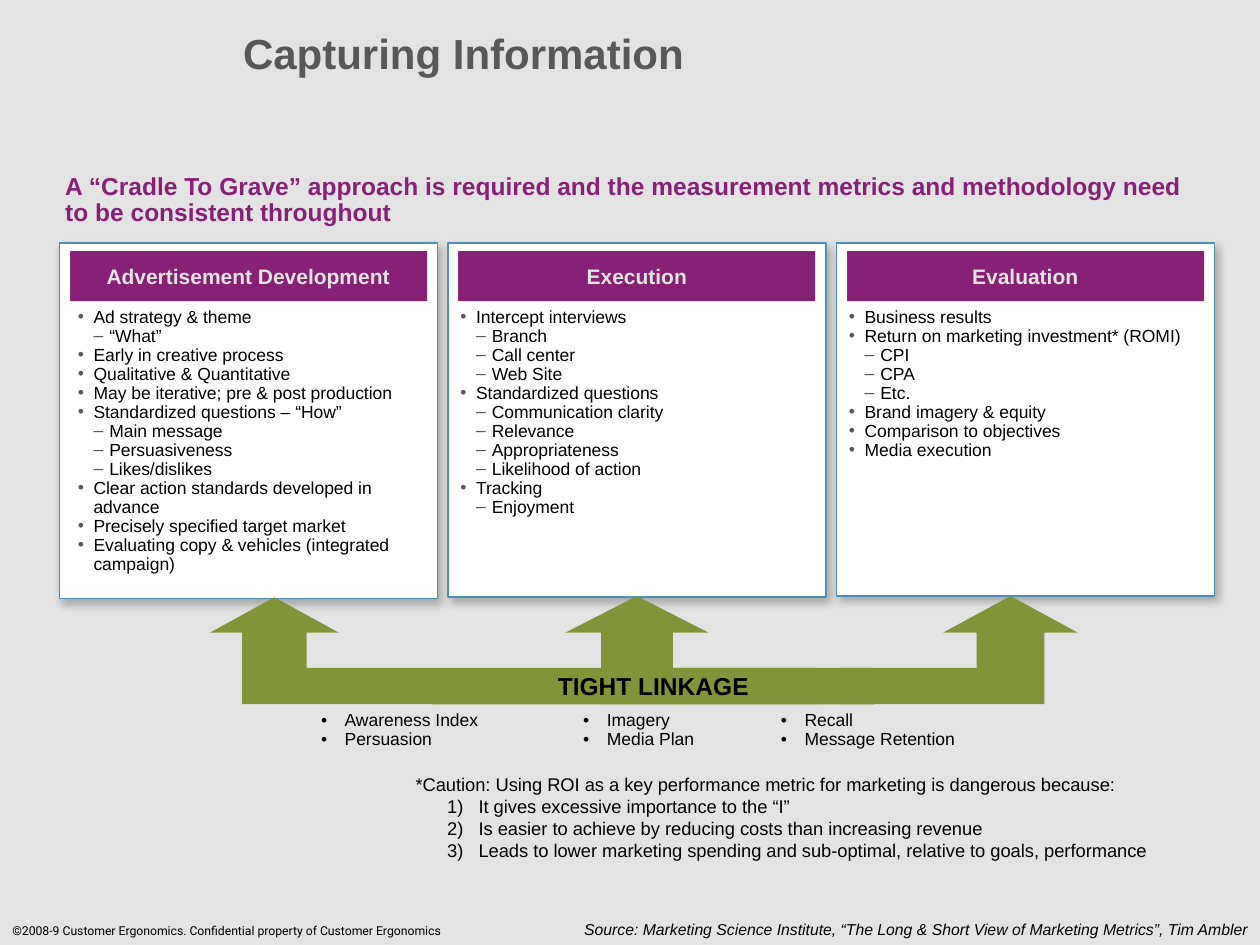
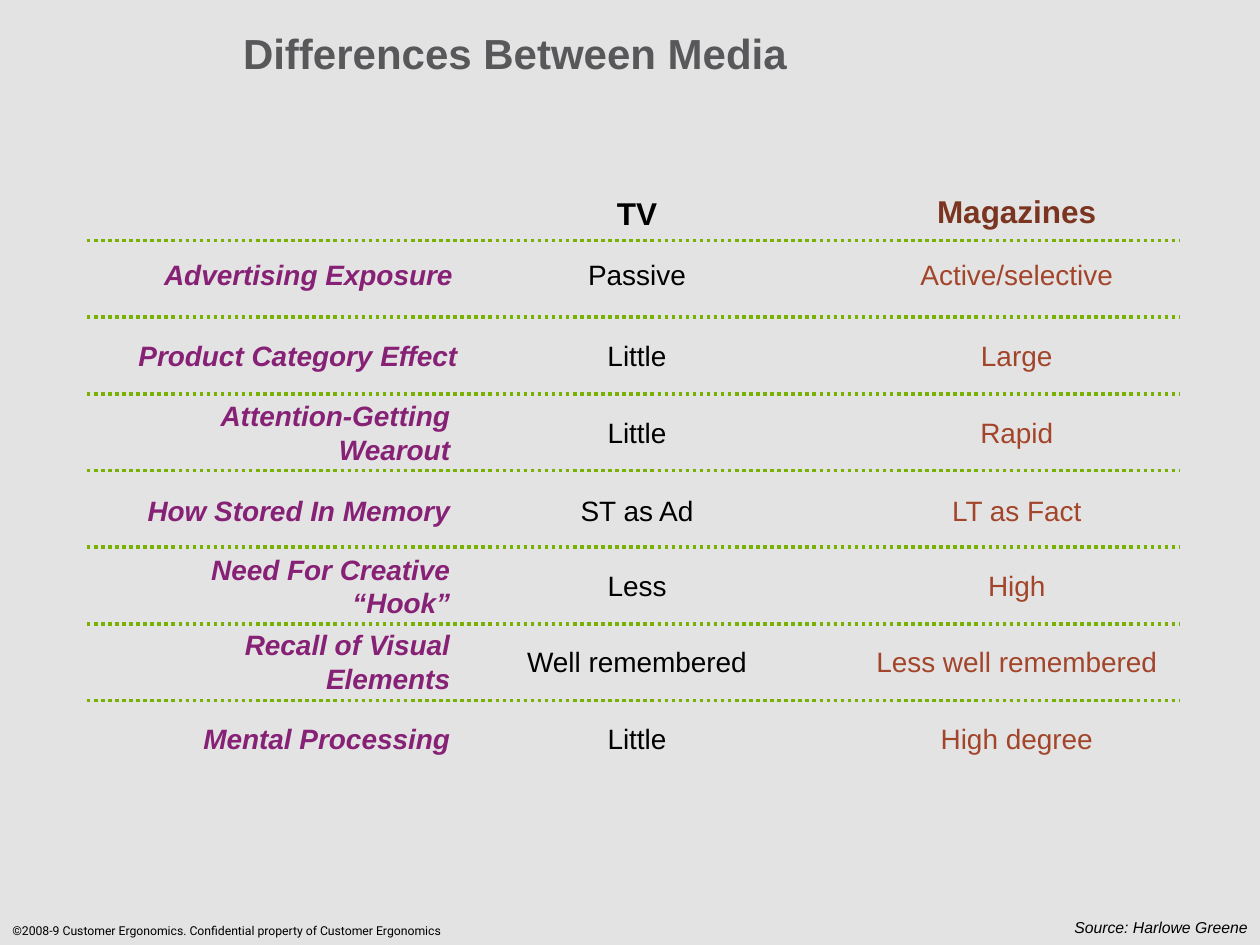
from lxml import etree
from pptx import Presentation
from pptx.dml.color import RGBColor
from pptx.enum.dml import MSO_LINE
from pptx.enum.shapes import MSO_CONNECTOR, MSO_SHAPE
from pptx.enum.text import MSO_ANCHOR, PP_ALIGN
from pptx.oxml.ns import qn
from pptx.util import Pt

BACKGROUND, GREY, PURPLE, BLACK = "E3E3E3", "58585A", "862175", "000000"
OLIVE, RULE_GREEN, CARD_BLUE, WHITE = "81943A", "78B200", "508EB5", "FFFFFF"
RUST, DARK_RUST = "A2452B", "7A3420"
LEFT, CENTER, RIGHT = PP_ALIGN.LEFT, PP_ALIGN.CENTER, PP_ALIGN.RIGHT

CARD_LEFT, CARD_TOP, CARD_PITCH, CARD_W = 34, 139, 222, 216
STAGES = [
    ("Advertisement Development", 203, 37.4, [
        ("Ad strategy & theme", ["“What”"]),
        ("Early in creative process", []),
        ("Qualitative & Quantitative", []),
        ("May be iterative; pre & post production", []),
        ("Standardized questions – “How”",
         ["Main message", "Persuasiveness", "Likes/dislikes"]),
        ("Clear action standards developed in advance", []),
        ("Precisely specified target market", []),
        ("Evaluating copy & vehicles (integrated campaign)", [])]),
    ("Execution", 202.3, 256, [
        ("Intercept interviews", ["Branch", "Call center", "Web Site"]),
        ("Standardized questions",
         ["Communication clarity", "Relevance", "Appropriateness",
          "Likelihood of action"]),
        ("Tracking", ["Enjoyment"])]),
    ("Evaluation", 201.6, 478, [
        ("Business results", []),
        ("Return on marketing investment* (ROMI)", ["CPI", "CPA", "Etc."]),
        ("Brand imagery & equity", []),
        ("Comparison to objectives", []),
        ("Media execution", [])]),
]
MEASURES = [(176.4, ["Awareness Index", "Persuasion"]),
            (326.2, ["Imagery", "Media Plan"]),
            (439.2, ["Recall", "Message Retention"])]
CAUTIONS = [
    "It gives excessive importance to the “I”",
    "Is easier to achieve by reducing costs than increasing revenue",
    "Leads to lower marketing spending and sub-optimal, relative to goals, "
    "performance"]

MEDIA_ROWS = [
    ("Advertising Exposure", "Passive", "Active/selective", 137.5, 203.8, 38.9),
    ("Product Category Effect", "Little", "Large", 185, 206.6, 36),
    ("Attention-Getting Wearout", "Little", "Rapid", 226.8, 202.3, 40.3),
    ("How Stored In Memory", "ST as Ad", "LT as Fact", 271.4, 202.3, 40.3),
    ("Need For Creative “Hook”", "Less", "High", 314.6, 202.3, 40.3),
    ("Recall of Visual Elements", "Well remembered", "Less well remembered",
     357.8, 202.3, 40.3),
    ("Mental Processing", "Little", "High degree", 401.8, 202.3, 40.3),
]
LABEL_LEFT, TV_CENTER, MAGAZINE_CENTER = 62, 364, 581
RULE_TOP, RULE_PITCH = 137.5, 43.8


def rgb(color):
    return RGBColor.from_string(color)


def add_effects(sp):
    return etree.SubElement(sp._element.spPr, qn("a:effectLst"))


def add_bullet(p, bullet, indent, hang, color=None):
    pPr = p._p.get_or_add_pPr()
    pPr.set("marL", str(Pt(indent)))
    pPr.set("indent", str(-Pt(hang)))
    if color:
        clr = etree.SubElement(pPr, qn("a:buClr"))
        etree.SubElement(clr, qn("a:srgbClr"), val=color)
    if bullet == "1)":
        etree.SubElement(pPr, qn("a:buAutoNum"), type="arabicParenR")
    else:
        etree.SubElement(pPr, qn("a:buFont"), typeface="Arial")
        etree.SubElement(pPr, qn("a:buChar"), char=bullet)


def write(tf, text, size=10, color=BLACK, bold=False, italic=False,
          font="Arial", align=LEFT, spacing=None, bullet=None):
    p = tf.paragraphs[0]
    if p.runs:
        p = tf.add_paragraph()
    if bullet:
        add_bullet(p, *bullet)
    p.alignment = align
    if spacing:
        p.line_spacing = spacing
    r = p.add_run()
    r.text = text
    r.font.size, r.font.name = Pt(size), font
    r.font.bold, r.font.italic = bold, italic
    r.font.color.rgb = rgb(color)


def add_box(slide, x, y, w, h, anchor=MSO_ANCHOR.TOP):
    tf = slide.shapes.add_textbox(Pt(x), Pt(y), Pt(w), Pt(h)).text_frame
    tf.word_wrap = True
    tf.vertical_anchor = anchor
    return tf


def add_label(slide, text, x, y, w, h, **fmt):
    write(add_box(slide, x, y, w, h, MSO_ANCHOR.MIDDLE), text, **fmt)


def paint(sp, fill, line=None):
    sp.shadow.inherit = False
    sp.fill.solid()
    sp.fill.fore_color.rgb = rgb(fill)
    if line:
        sp.line.color.rgb = rgb(line)
        sp.line.width = Pt(1)
    else:
        sp.line.fill.background()


def add_block(slide, kind, x, y, w, h, fill, line=None):
    sp = slide.shapes.add_shape(kind, Pt(x), Pt(y), Pt(w), Pt(h))
    paint(sp, fill, line)
    return sp


def add_banner(slide, kind, text, x, y, w, h, fill, **fmt):
    sp = add_block(slide, kind, x, y, w, h, fill)
    if kind == MSO_SHAPE.BEVEL:
        sp.adjustments[0] = 0
    tf = sp.text_frame
    tf.word_wrap = False
    tf.vertical_anchor = MSO_ANCHOR.MIDDLE
    write(tf, text, bold=True, align=CENTER, **fmt)


def add_card(slide, x, h):
    sp = add_block(slide, MSO_SHAPE.RECTANGLE, x, CARD_TOP, CARD_W, h,
                   WHITE, CARD_BLUE)
    effects = sp._element.spPr.find(qn("a:effectLst"))
    shadow = etree.SubElement(effects, qn("a:outerShdw"), blurRad=str(Pt(5)),
                              dist=str(Pt(3)), dir=str(55 * 60000),
                              algn="tl", rotWithShape="0")
    clr = etree.SubElement(shadow, qn("a:srgbClr"), val=BLACK)
    etree.SubElement(clr, qn("a:alpha"), val="25000")


def add_outline(slide, x, topics):
    tf = add_box(slide, x, 172.8, 210, 160)
    for topic, details in topics:
        write(tf, topic, spacing=0.9, bullet=("•", 9, 9, GREY))
        for detail in details:
            write(tf, detail, spacing=0.9, bullet=("–", 18, 9, GREY))


def add_elbow_arrow(slide, tip_x, tip_y, head, foot_x):
    side = 1 if foot_x > tip_x else -1
    wing, shaft = side * head, side * head / 2
    base, bar_top, bar_bottom = 361.6, 381.6, 402.4
    points = [(tip_x + wing, base), (tip_x + shaft, base),
              (tip_x + shaft, bar_top), (foot_x, bar_top),
              (foot_x, bar_bottom), (tip_x - shaft, bar_bottom),
              (tip_x - shaft, base), (tip_x - wing, base)]
    builder = slide.shapes.build_freeform(Pt(tip_x), Pt(tip_y))
    builder.add_line_segments([(Pt(x), Pt(y)) for x, y in points], close=True)
    paint(builder.convert_to_shape(), OLIVE)


def add_dotted_rule(slide, y):
    line = slide.shapes.add_connector(
        MSO_CONNECTOR.STRAIGHT, Pt(49.7), Pt(y), Pt(674), Pt(y))
    line.line.color.rgb = rgb(RULE_GREEN)
    line.line.width = Pt(2)
    line.line.dash_style = MSO_LINE.ROUND_DOT
    add_effects(line)


def new_slide(prs, title, source, source_top):
    slide = prs.slides.add_slide(prs.slide_layouts[6])
    write(add_box(slide, 0, 524.2, 281, 15.8),
          "©2008-9 Customer Ergonomics. Confidential property of "
          "Customer Ergonomics", size=7, font="Roboto")
    tf = add_box(slide, 131.8, 0, 588.2, 66.2, MSO_ANCHOR.MIDDLE)
    tf.margin_top = tf.margin_bottom = 0
    write(tf, title, size=24, color=GREY, bold=True, spacing=0.8)
    write(add_box(slide, 206.6, source_top, 513.4, 18), f"Source: {source}",
          size=9, italic=True, align=RIGHT)
    return slide


def build_capturing(prs):
    slide = new_slide(
        prs, "Capturing Information",
        "Marketing Science Institute, “The Long & Short View of Marketing "
        "Metrics”, Tim Ambler", 522)
    write(add_box(slide, 30.2, 95.8, 660, 40),
          "A “Cradle To Grave” approach is required and the measurement "
          "metrics and methodology need to be consistent throughout",
          size=14, color=PURPLE, bold=True, spacing=0.9)
    for i, (stage, height, text_left, topics) in enumerate(STAGES):
        x = CARD_LEFT + i * CARD_PITCH
        add_card(slide, x, height)
        add_banner(slide, MSO_SHAPE.BEVEL, stage, x + 6, 143.3, 203.8, 28.8,
                   PURPLE, size=12, color=BACKGROUND)
        add_outline(slide, text_left, topics)

    add_elbow_arrow(slide, 577.4, 340.6, 38.6, 481)
    add_elbow_arrow(slide, 364, 340.6, 41, 466.6)
    add_elbow_arrow(slide, 156.8, 341.3, 36.9, 249)
    add_banner(slide, MSO_SHAPE.RECTANGLE, "TIGHT LINKAGE",
               247, 381.6, 252.7, 20.9, OLIVE, size=14)

    for x, measures in MEASURES:
        tf = add_box(slide, x, 403.2, 131.8, 29.5)
        for measure in measures:
            write(tf, measure, spacing=0.9, bullet=("•", 13.5, 13.5))
    tf = add_box(slide, 230.4, 438.5, 436.3, 58.3)
    write(tf, "*Caution: Using ROI as a key performance metric for marketing "
              "is dangerous because:", size=10.5)
    for caution in CAUTIONS:
        write(tf, caution, size=10.5, bullet=("1)", 36, 18))


def build_differences(prs):
    slide = new_slide(prs, "Differences Between Media", "Harlowe Greene", 520.6)
    for text, center, y, color in (("TV", TV_CENTER, 104.4, BLACK),
                                   ("Magazines", MAGAZINE_CENTER, 103, DARK_RUST)):
        add_label(slide, text, center - 91.5, y, 183, 34.6,
                  size=18, color=color, bold=True, align=CENTER)
    for i, (label, tv, magazines, y, w, h) in enumerate(MEDIA_ROWS):
        add_dotted_rule(slide, RULE_TOP + i * RULE_PITCH)
        add_label(slide, label, LABEL_LEFT, y, w, h, size=16, color=PURPLE,
                  bold=True, italic=True, align=RIGHT)
        for text, center, color in ((tv, TV_CENTER, BLACK),
                                    (magazines, MAGAZINE_CENTER, RUST)):
            add_label(slide, text, center - w / 2, y, w, h,
                      size=16, color=color, align=CENTER)


def main():
    prs = Presentation()
    prs.slide_width, prs.slide_height = Pt(720), Pt(540)
    fill = prs.slide_master.background.fill
    fill.solid()
    fill.fore_color.rgb = rgb(BACKGROUND)
    build_capturing(prs)
    build_differences(prs)
    prs.save("out.pptx")


if __name__ == "__main__":
    main()
